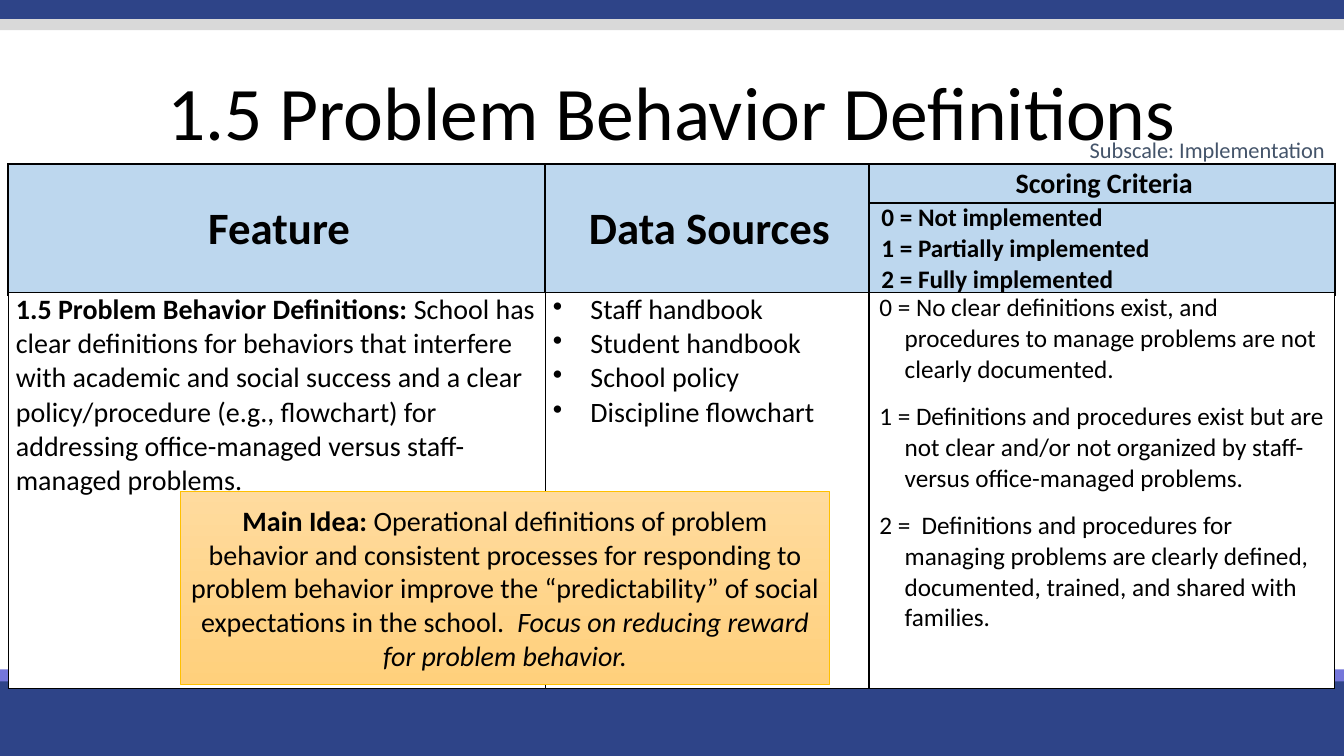
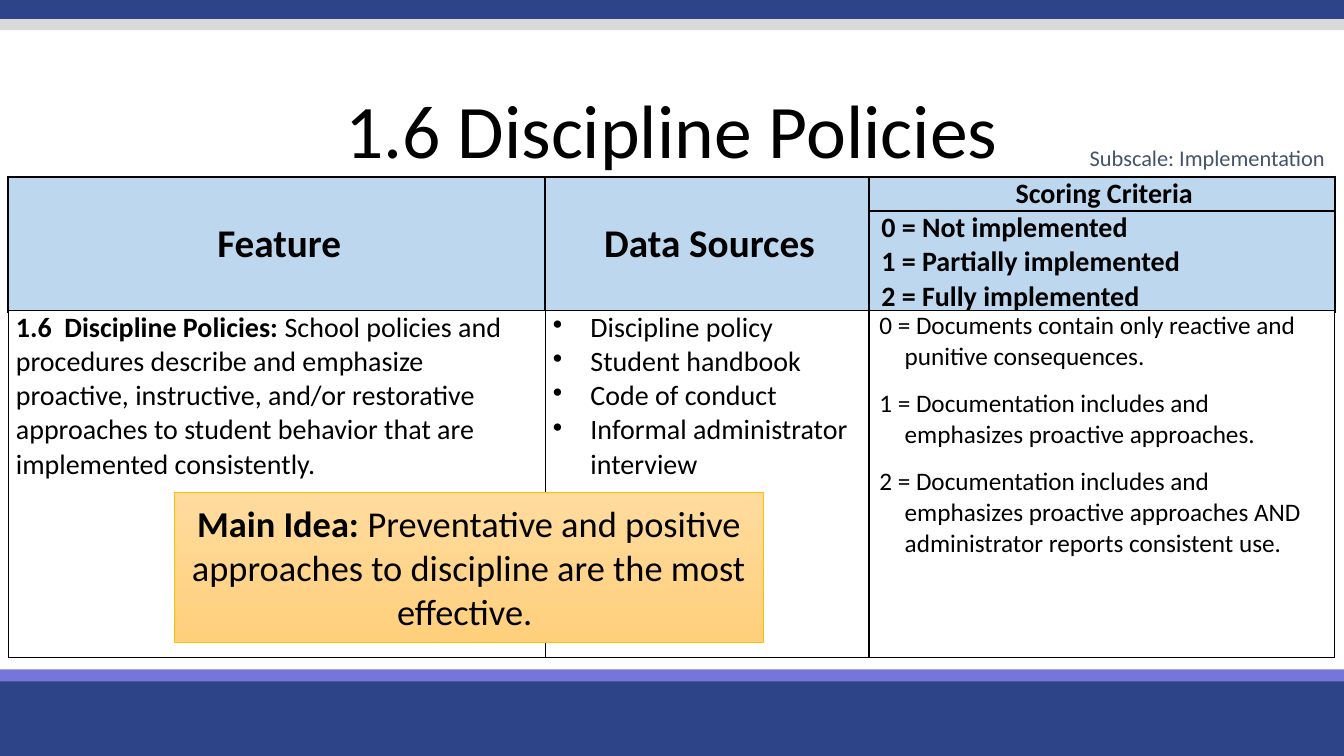
from dataclasses import dataclass

from lxml.etree import SubElement
from pptx import Presentation
from pptx.dml.color import RGBColor as Rgb
from pptx.enum.shapes import MSO_SHAPE as Shape
from pptx.enum.text import MSO_ANCHOR as Anchor, PP_ALIGN as Align
from pptx.oxml.ns import qn
from pptx.util import Cm, Pt


@dataclass(frozen=True)
class Theme:
    font: str = "Calibri"
    navy: str = "2E4488"
    violet: str = "7476DA"
    silver: str = "D9D9D9"
    black: str = "000000"
    white: str = "FFFFFF"
    header: str = "BDD7EE"
    slate: str = "44546A"
    idea_top: str = "FFDB9E"
    idea_bottom: str = "FFD07C"
    idea_line: str = "FFC000"
    title_size: int = 54
    body_size: int = 20
    criteria_size: int = 18
    subscale_size: int = 16


WIDTH, HEIGHT = 33.87, 19.05
LEFT = 0.21
COLUMNS = (13.53, 8.16, 11.74)
TABLE_WIDTH = sum(COLUMNS)
SUBSCALE_WIDTH = 6.6
HEADER_INDENT = (0.91, -0.79)
BULLET_INDENT = (0.95, -0.95)
CRITERIA_INDENT = (0.71, -0.64)
LEVELS = ("0 = Not implemented", "1 = Partially implemented", "2 = Fully implemented")


class FeatureDeck:
    def __init__(self, theme):
        self.theme = theme
        self.deck = Presentation()
        self.deck.slide_width, self.deck.slide_height = Cm(WIDTH), Cm(HEIGHT)
        self.page = None

    def new_page(self):
        self.page = self.deck.slides.add_slide(self.deck.slide_layouts[6])
        theme = self.theme
        for top, height, color in (
            (17.02, HEIGHT - 17.02, theme.navy),
            (16.87, 0.3, theme.violet),
            (0, 0.48, theme.navy),
            (0.48, 0.28, theme.silver),
        ):
            band = self.rectangle(0, top, WIDTH, height)
            band.fill.solid()
            band.fill.fore_color.rgb = Rgb.from_string(color)
            band.line.fill.background()

    def rectangle(self, left, top, width, height):
        box = self.page.shapes.add_shape(
            Shape.RECTANGLE, Cm(left), Cm(top), Cm(width), Cm(height))
        box.shadow.inherit = False
        return box

    def fill_text(self, frame, paragraphs, size, color=None, align=Align.LEFT,
                  bold=False, indent=None, bullet=False, after=None):
        frame.word_wrap = True
        for index, spans in enumerate(paragraphs):
            para = frame.add_paragraph() if index else frame.paragraphs[0]
            para.alignment = align
            if indent:
                properties = para._p.get_or_add_pPr()
                properties.set("marL", str(Cm(indent[0])))
                properties.set("indent", str(Cm(indent[1])))
                if bullet:
                    SubElement(properties, qn("a:buChar")).set("char", "•")
            if after is not None:
                para.space_after = Pt(after)
            para.font.name = self.theme.font
            para.font.size = Pt(size)
            para.font.bold = bold
            para.font.color.rgb = Rgb.from_string(color or self.theme.black)
            for text, style in [(spans, "")] if isinstance(spans, str) else spans:
                span = para.add_run()
                span.text = text
                if style == "bold":
                    span.font.bold = True
                elif style == "italic":
                    span.font.italic = True

    def text(self, left, top, width, height, words, size, color, align):
        box = self.page.shapes.add_textbox(Cm(left), Cm(top), Cm(width), Cm(height))
        self.fill_text(box.text_frame, [words], size, color, align)

    def title(self, top, words):
        self.text(LEFT, top, TABLE_WIDTH, 2.57, words, self.theme.title_size,
                  self.theme.black, Align.CENTER)

    def subscale(self, top):
        self.text(LEFT + TABLE_WIDTH - SUBSCALE_WIDTH, top, SUBSCALE_WIDTH, 0.94,
                  "Subscale: Implementation", self.theme.subscale_size,
                  self.theme.slate, Align.RIGHT)

    def border(self, cell, width):
        properties = cell._tc.get_or_add_tcPr()
        for side in ("lnL", "lnR", "lnT", "lnB"):
            line = SubElement(properties, qn(f"a:{side}"))
            line.set("w", str(Pt(width)))
            fill = SubElement(line, qn("a:solidFill"))
            SubElement(fill, qn("a:srgbClr")).set("val", self.theme.black)

    def table(self, top, rows, color, line_width):
        grid = self.page.shapes.add_table(
            len(rows), len(COLUMNS), Cm(LEFT), Cm(top),
            Cm(TABLE_WIDTH), Cm(sum(rows))).table
        grid.first_row = grid.horz_banding = False
        for column, width in zip(grid.columns, COLUMNS):
            column.width = Cm(width)
        for row, height in zip(grid.rows, rows):
            row.height = Cm(height)
            for cell in row.cells:
                self.border(cell, line_width)
                cell.fill.solid()
                cell.fill.fore_color.rgb = Rgb.from_string(color)
                cell.margin_left = cell.margin_right = Cm(0.19)
                cell.margin_top = cell.margin_bottom = Cm(0)
        return grid

    def header_table(self, top, rows, heading_size, level_size):
        grid = self.table(top, rows, self.theme.header, 1.5)
        for column in (0, 1):
            grid.cell(0, column).merge(grid.cell(1, column))
        headings = (("Feature", heading_size), ("Data Sources", heading_size),
                    ("Scoring Criteria", self.theme.body_size))
        for column, (heading, size) in enumerate(headings):
            cell = grid.cell(0, column)
            cell.vertical_anchor = Anchor.MIDDLE
            self.fill_text(cell.text_frame, [heading], size, align=Align.CENTER,
                           bold=True, indent=HEADER_INDENT)
        self.fill_text(grid.cell(1, 2).text_frame, LEVELS, level_size, bold=True,
                       indent=HEADER_INDENT)

    def detail_table(self, top, height, feature, sources, criteria):
        grid = self.table(top, (height,), self.theme.white, 1)
        frames = [grid.cell(0, column).text_frame for column in range(len(COLUMNS))]
        size = self.theme.body_size
        self.fill_text(frames[0], [feature], size)
        self.fill_text(frames[1], sources, size, indent=BULLET_INDENT, bullet=True)
        self.fill_text(frames[2], criteria, self.theme.criteria_size,
                       indent=CRITERIA_INDENT, after=12)

    def main_idea(self, place, spans, size):
        box = self.rectangle(*place)
        box.fill.gradient()
        box.fill.gradient_angle = 270
        colors = (self.theme.idea_top, self.theme.idea_bottom)
        for stop, color in zip(box.fill.gradient_stops, colors):
            stop.color.rgb = Rgb.from_string(color)
        box.line.color.rgb = Rgb.from_string(self.theme.idea_line)
        box.line.width = Pt(0.5)
        box.text_frame.vertical_anchor = Anchor.MIDDLE
        self.fill_text(box.text_frame, [[("Main Idea: ", "bold"), *spans]], size,
                       align=Align.CENTER)

    def feature_page(self, title, title_top, subscale_top, table_top, header_rows,
                     heading_size, level_size, detail_height, feature, sources,
                     criteria, idea_place, idea, idea_size):
        self.new_page()
        self.header_table(table_top, header_rows, heading_size, level_size)
        self.detail_table(table_top + sum(header_rows), detail_height,
                          feature, sources, criteria)
        self.main_idea(idea_place, idea, idea_size)
        self.subscale(subscale_top)
        self.title(title_top, title)


def main():
    slides = FeatureDeck(Theme())
    slides.feature_page(
        title="1.5 Problem Behavior Definitions",
        title_top=1.52,
        subscale_top=3.3,
        table_top=4.14,
        header_rows=(0.97, 2.26),
        heading_size=32,
        level_size=18,
        detail_height=9.98,
        feature=[
            ("1.5 Problem Behavior Definitions: ", "bold"),
            ("School has clear definitions for behaviors that interfere with academic "
             "and social success and a clear policy/procedure (e.g., flowchart) for "
             "addressing office-managed versus staff-managed problems.", ""),
        ],
        sources=["Staff handbook", "Student handbook", "School policy",
                 "Discipline flowchart"],
        criteria=[
            "0 = No clear definitions exist, and procedures to manage problems are "
            "not clearly documented.",
            "1 = Definitions and procedures exist but are not clear and/or not "
            "organized by staff- versus office-managed problems.",
            "2 =  Definitions and procedures for managing problems are clearly "
            "defined, documented, trained, and shared with families.",
        ],
        idea_place=(4.55, 12.37, 16.36, 4.88),
        idea=[
            ("Operational definitions of problem behavior and consistent processes "
             "for responding to problem behavior improve the “predictability” of "
             "social expectations in the school.  ", ""),
            ("Focus on reducing reward for problem behavior.", "italic"),
        ],
        idea_size=20,
    )
    slides.feature_page(
        title="1.6 Discipline Policies",
        title_top=1.96,
        subscale_top=3.51,
        table_top=4.45,
        header_rows=(0.86, 2.51),
        heading_size=28,
        level_size=20,
        detail_height=8.74,
        feature=[
            ("1.6  Discipline Policies: ", "bold"),
            ("School policies and procedures describe and emphasize proactive, "
             "instructive, and/or restorative approaches to student behavior that "
             "are implemented consistently.", ""),
        ],
        sources=["Discipline policy", "Student handbook", "Code of conduct",
                 "Informal administrator interview"],
        criteria=[
            "0 = Documents contain only reactive and punitive consequences.",
            "1 = Documentation includes and emphasizes proactive approaches.",
            "2 = Documentation includes and emphasizes proactive approaches AND "
            "administrator reports consistent use.",
        ],
        idea_place=(4.39, 12.4, 14.86, 3.78),
        idea=[("Preventative and positive approaches to discipline are the most "
               "effective. ", "")],
        idea_size=26,
    )
    slides.deck.save("out.pptx")


if __name__ == "__main__":
    main()
